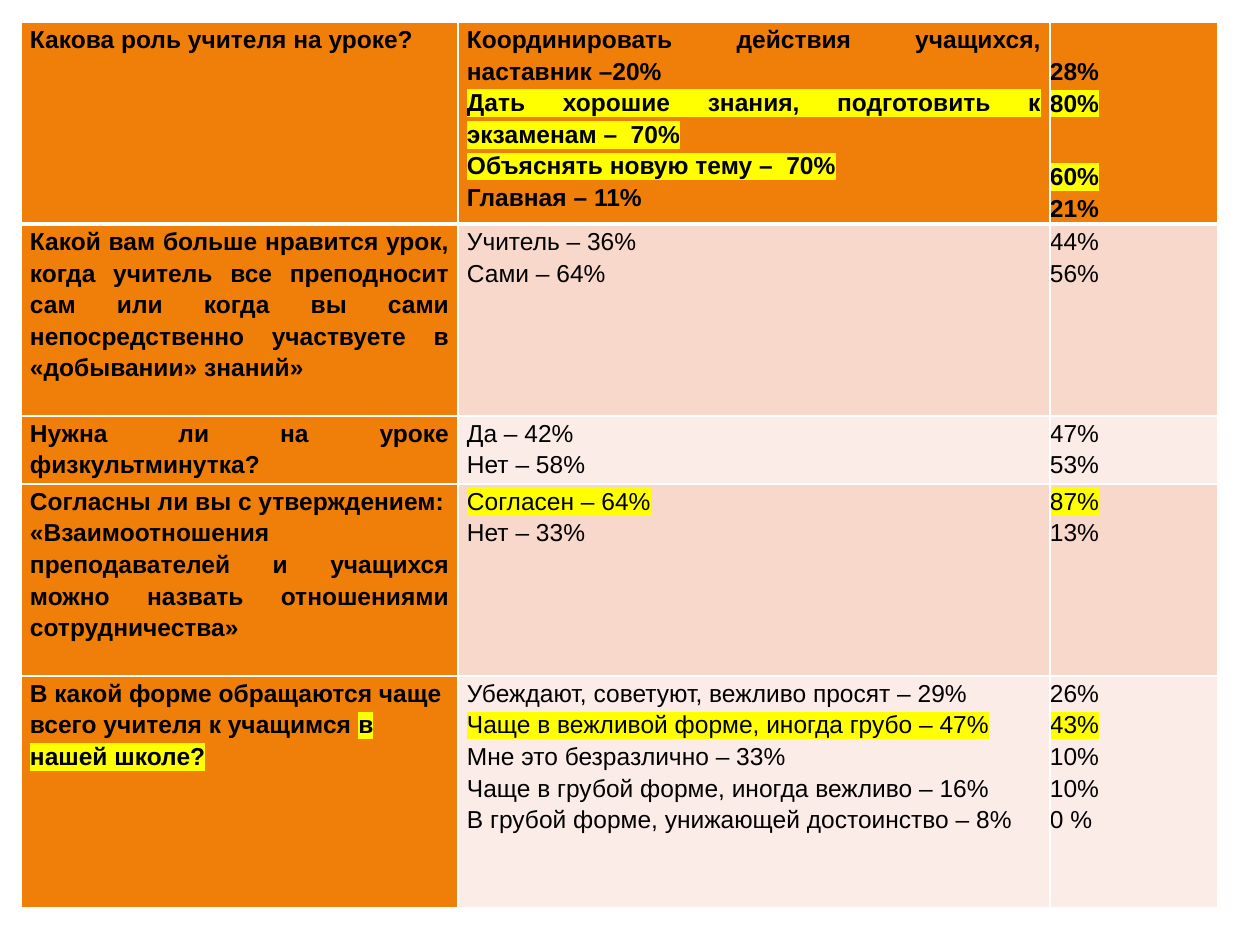
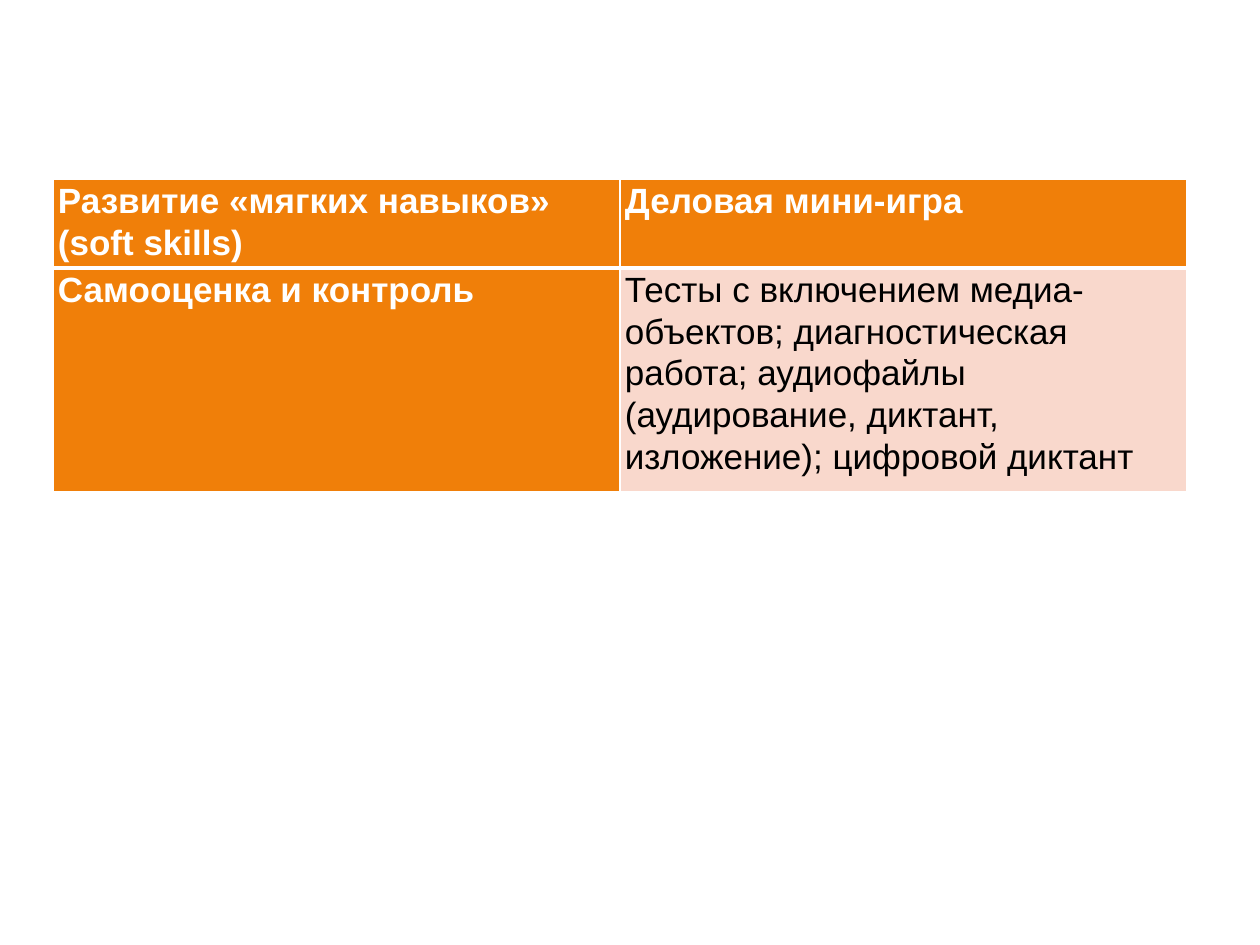
from lxml import etree
from pptx import Presentation
from pptx.dml.color import RGBColor
from pptx.enum.text import PP_ALIGN
from pptx.oxml.ns import qn
from pptx.util import Pt

LEFT, JUSTIFY = PP_ALIGN.LEFT, PP_ALIGN.JUSTIFY
FONT = "Arial"
ORANGE = RGBColor(0xF0, 0x7F, 0x09)
ROSE = RGBColor(0xF9, 0xD8, 0xCC)
PALE = RGBColor(0xFC, 0xEC, 0xE7)
WHITE = RGBColor(0xFF, 0xFF, 0xFF)
BLACK = RGBColor(0x00, 0x00, 0x00)
YELLOW = RGBColor(0xFF, 0xFF, 0x00)
EMU_PER_PX = 914400 / 126


def px(n):
    return round(n * EMU_PER_PX)


def add_grid(slide, left, top, widths, heights, rows, insets, size, spacing, heading_color):
    """Table with an orange header row and first column; *text* is highlighted."""
    frame = slide.shapes.add_table(len(rows), len(widths), px(left), px(top),
                                   px(sum(widths)), px(sum(heights)))
    table = frame.table
    for column, width in zip(table.columns, widths):
        column.width = px(width)
    for i, (row, height) in enumerate(zip(rows, heights)):
        table.rows[i].height = px(height)
        align, texts = row
        for j, lines in enumerate(texts):
            cell = table.cell(i, j)
            heading = i == 0 or j == 0
            cell.margin_left = cell.margin_right = px(insets[j])
            cell.margin_top = cell.margin_bottom = 0
            cell.fill.solid()
            cell.fill.fore_color.rgb = ORANGE if heading else (ROSE if i % 2 else PALE)

            # White borders, thick between header and body
            thick = {0: "B", 1: "T"}.get(i)
            for k, side in enumerate("LRTB"):
                ln = etree.Element(qn("a:ln" + side), w=str(Pt(3 if side == thick else 1)))
                fill = etree.SubElement(ln, qn("a:solidFill"))
                etree.SubElement(fill, qn("a:srgbClr"), val=str(WHITE))
                cell._tc.tcPr.insert(k, ln)

            # Text
            tf = cell.text_frame
            for n, line in enumerate(lines):
                p = tf.add_paragraph() if n else tf.paragraphs[0]
                p.alignment = align
                p.line_spacing = spacing
                for m, part in enumerate(line.split("*")):
                    if not part:
                        continue
                    r = p.add_run()
                    r.text = part
                    r.font.name = FONT
                    r.font.size = Pt(size)
                    r.font.bold = heading
                    r.font.color.rgb = heading_color if heading else BLACK
                    if m % 2:
                        mark = etree.Element(qn("a:highlight"))
                        etree.SubElement(mark, qn("a:srgbClr"), val=str(YELLOW))
                        r.font._element.find(qn("a:solidFill")).addnext(mark)
    return table


prs = Presentation()
prs.slide_width, prs.slide_height = px(1260), px(945)
blank = prs.slide_layouts[6]

# Slide 1: survey answers
survey = [
    (JUSTIFY, [
        ["Какова роль учителя на уроке?"],
        ["Координировать действия учащихся, наставник –20%",
         "*Дать хорошие знания, подготовить к экзаменам –  70%*",
         "*Объяснять новую тему –  70%*",
         "Главная – 11%"],
        ["28%", "*80%*", "*60%*", "21%"]]),
    (JUSTIFY, [
        ["Какой вам больше нравится урок, когда учитель все преподносит сам или когда "
         "вы сами непосредственно участвуете в «добывании» знаний»"],
        ["Учитель – 36%", "Сами – 64%"],
        ["44%", "56%"]]),
    (JUSTIFY, [
        ["Нужна ли на уроке физкультминутка?"],
        ["Да – 42%", "Нет – 58%"],
        ["47%", "53%"]]),
    (JUSTIFY, [
        ["Согласны ли вы с утверждением:",
         "«Взаимоотношения преподавателей и учащихся можно назвать отношениями сотрудничества»"],
        ["*Согласен – 64%*", "Нет – 33%"],
        ["*87%*", "13%"]]),
    (LEFT, [
        ["В какой форме обращаются чаще всего учителя к учащимся *в нашей школе?*"],
        ["Убеждают, советуют, вежливо просят – 29%",
         "*Чаще в вежливой форме, иногда грубо – 47%*",
         "Мне это безразлично – 33%",
         "Чаще в грубой форме, иногда вежливо – 16%",
         "В грубой форме, унижающей достоинство – 8%"],
        ["26%", "*43%*", "10%", "10%", "0 %"]]),
]
s = prs.slides.add_slide(blank)
table = add_grid(s, 21, 22, [437, 592, 168], [202, 192, 68, 192, 232], survey,
                 [9, 9, 0], 14, 1.15, BLACK)

# Line the header percentages up with their answers
shares = table.cell(0, 2)
shares.margin_top = px(32)
shares.text_frame.paragraphs[2].space_before = Pt(24)

# Slide 2: skills and activities
skills = [
    (LEFT, [["Развитие «мягких навыков» (soft skills)"], ["Деловая мини-игра"]]),
    (LEFT, [["Самооценка и контроль"],
            ["Тесты с включением медиа-объектов; диагностическая работа; аудиофайлы "
             "(аудирование, диктант, изложение); цифровой диктант"]]),
]
s = prs.slides.add_slide(blank)
add_grid(s, 53, 179, [567, 567], [89, 224], skills, [5, 5], 20, 1.07, WHITE)

prs.save("out.pptx")
